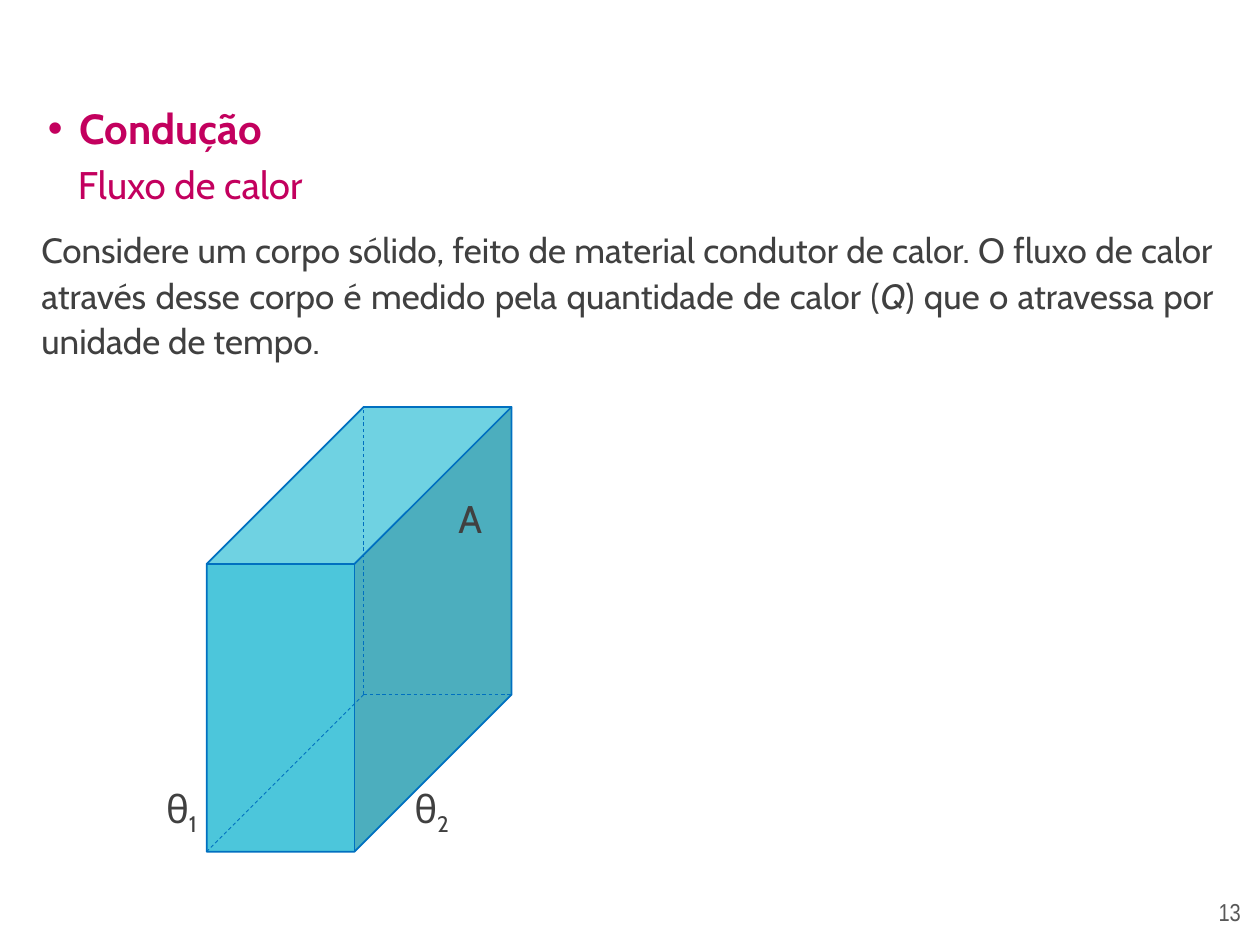
"""Builds a lesson slide on heat flow through a conducting solid."""
from lxml import etree
from pptx import Presentation
from pptx import util as u
from pptx.dml import color
from pptx.enum import dml, shapes, text
from pptx.oxml import ns

COLORS = {
    "heading": "C3005E",
    "body": "404040",
    "number": "585858",
    "solid": "00AFCC",
    "edge": "0070C0",
}
ALIGN = text.PP_ALIGN


def rgb(name):
    """Return the named colour of the slide."""
    return color.RGBColor.from_string(COLORS[name])


def add_element(parent, tag, **attributes):
    """Append a DrawingML element to its parent and return it."""
    return etree.SubElement(parent, ns.qn(tag), attributes)


def write_text(frame, *runs, size=22, ink="body", face="Cabin", bold=False,
               align=ALIGN.LEFT, leading=None):
    """Write (text, style) runs into the first paragraph of a frame."""
    paragraph = frame.paragraphs[0]
    paragraph.alignment = align
    if leading:
        paragraph.line_spacing = leading
    for words, style in runs:
        run = paragraph.add_run()
        run.text = words
        run.font.name = face
        run.font.size = u.Pt(size)
        run.font.bold = bold
        run.font.color.rgb = rgb(ink)
        run.font.italic = style == "italic"
        if style == "subscript":
            run.font._element.set("baseline", "-25000")
    return paragraph


def add_label(slide, box, *runs, wrap=False, **style):
    """Add a text box that grows with its text at the given box in inches."""
    frame = slide.shapes.add_textbox(*map(u.Inches, box)).text_frame
    frame.word_wrap = wrap
    frame.auto_size = text.MSO_AUTO_SIZE.SHAPE_TO_FIT_TEXT
    write_text(frame, *runs, **style)


def place_heading(slide, box):
    """Move the body placeholder to the box and write the bulleted topic."""
    topic = slide.placeholders[1]
    topic.left, topic.top, topic.width, topic.height = map(u.Inches, box)
    properties = topic.text_frame.paragraphs[0]._p.get_or_add_pPr()
    properties.set("marL", str(u.Inches(0.25)))
    properties.set("indent", str(-u.Inches(0.25)))
    bullet_color = add_element(properties, "a:buClr")
    add_element(bullet_color, "a:srgbClr", val=COLORS["heading"])
    add_element(properties, "a:buFont", typeface="Arial")
    add_element(properties, "a:buChar", char="•")
    write_text(topic.text_frame, ("Condução", None), size=24, ink="heading",
               bold=True, leading=0.9).space_before = u.Pt(0)


def add_hidden_edge(slide, start, end):
    """Draw a dashed edge between two points in inches."""
    edge = slide.shapes.add_connector(
        shapes.MSO_CONNECTOR.STRAIGHT, *map(u.Inches, (*start, *end)))
    edge.line.color.rgb = rgb("edge")
    edge.line.width = u.Pt(0.5)
    edge.line.dash_style = dml.MSO_LINE.DASH
    add_element(edge._element.spPr, "a:effectLst")


def place_solid(slide, box):
    """Draw the translucent solid, its hidden edges and its labels."""
    left, top, width, height = box
    depth_ratio = 0.515
    solid = slide.shapes.add_shape(
        shapes.MSO_SHAPE.CUBE, *map(u.Inches, box))
    solid.adjustments[0] = depth_ratio
    solid.shadow.inherit = False
    solid.fill.solid()
    solid.fill.fore_color.rgb = rgb("solid")
    tint = solid._element.spPr.find(ns.qn("a:solidFill"))[0]
    add_element(tint, "a:alpha", val="70000")
    solid.line.color.rgb = rgb("edge")
    solid.line.width = u.Pt(1)

    depth = depth_ratio * width
    bottom = top + height
    back_corner = (left + depth, bottom - depth)
    for corner in ((left + depth, top), (left, bottom),
                   (left + width, bottom - depth)):
        add_hidden_edge(slide, back_corner, corner)

    for index, offset in (("1", -0.42), ("2", 1.55)):
        add_label(slide, (left + offset, bottom - 0.58, 0.5, 0.47),
                  ("θ", None), (index, "subscript"))
    add_label(slide, (left + 1.9, top + 0.65, 0.38, 0.47), ("A", None))


def place_explanation(slide, box):
    """Write the justified definition of heat flow."""
    add_label(
        slide, box,
        ("Considere um corpo sólido, feito de material condutor de calor. "
         "O fluxo de calor através desse corpo é medido pela quantidade de "
         "calor (", None),
        ("Q", "italic"),
        (") que o atravessa por unidade de tempo.", None),
        wrap=True, size=20, align=ALIGN.JUSTIFY, leading=u.Pt(26))


def main():
    """Build and save the slide."""
    deck = Presentation()
    deck.slide_width, deck.slide_height = u.Inches(10), u.Inches(7.5)
    slide = deck.slides.add_slide(deck.slide_layouts[1])
    title = slide.shapes.title._element
    title.getparent().remove(title)

    place_heading(slide, (0.28, 0.81, 9.45, 5.99))
    add_label(slide, (0.52, 1.23, 2.16, 0.47), ("Fluxo de calor", None),
              ink="heading")
    place_solid(slide, (1.64, 3.23, 2.42, 3.53))
    place_explanation(slide, (0.23, 1.74, 9.5, 1.19))
    add_label(slide, (9.44, 7.07, 0.64, 0.34), ("13", None), wrap=True,
              size=14, ink="number", face="Arial Narrow", align=ALIGN.CENTER)
    deck.save("out.pptx")


if __name__ == "__main__":
    main()
